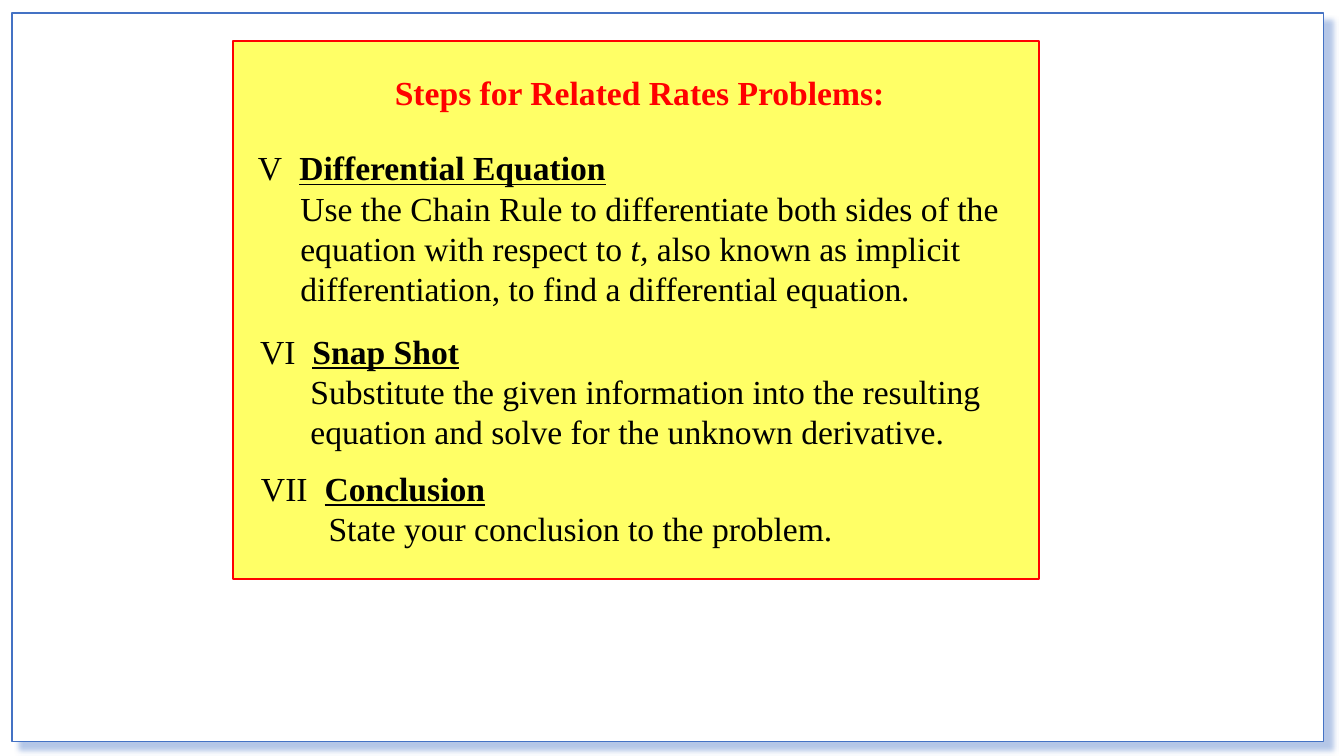
from dataclasses import dataclass

from lxml.etree import SubElement
from pptx import Presentation
from pptx.dml.color import RGBColor
from pptx.enum.shapes import MSO_SHAPE
from pptx.enum.text import MSO_ANCHOR, PP_ALIGN
from pptx.oxml.ns import qn
from pptx.util import Inches, Pt


@dataclass(frozen=True)
class Theme:
    font: str = "Times New Roman"
    size: int = 24
    ink: str = "000000"
    red: str = "FF0000"
    blue: str = "4472C4"
    paper: str = "FFFFFF"
    yellow: str = "FFFF66"


THEME = Theme()

# Numeral, heading, tab and indent in inches, place in panel, body runs (text, italic)
STEPS = [
    ("V", "Differential Equation", 0.41, 0.42, (1.88, 18.76, 95.12, 32.27),
     [("Use the Chain Rule to differentiate both sides of the equation "
       "with respect to ", False), ("t, ", True),
      ("also known as implicit differentiation, to find a differential "
       "equation", False), (".", True)]),
    ("VI", "Snap Shot", 0.52, 0.5, (2.13, 52.9, 93.6, 24.6),
     [("Substitute the given information into the resulting equation "
       "and solve for the unknown derivative.", False)]),
    ("VII", "Conclusion", 0.63, 0.67, (2.25, 78.4, 74, 17.1),
     [("State your conclusion to the problem.", False)]),
]


def part(box, x, y, w, h):
    """Return the box at the given percentages of another box."""
    left, top, width, height = box
    return (int(left + width * x / 100), int(top + height * y / 100),
            int(width * w / 100), int(height * h / 100))


def add_rect(slide, box, fill, line, weight):
    rect = slide.shapes.add_shape(MSO_SHAPE.RECTANGLE, *box)
    rect.shadow.inherit = False
    rect.fill.solid()
    rect.fill.fore_color.rgb = RGBColor.from_string(fill)
    rect.line.color.rgb = RGBColor.from_string(line)
    rect.line.width = Pt(weight)
    return rect


def add_run(para, text, color=THEME.ink, bold=False, italic=False, under=False):
    run = para.add_run()
    run.text = text
    font = run.font
    font.name, font.size = THEME.font, Pt(THEME.size)
    font.bold, font.italic, font.underline = bold, italic, under
    font.color.rgb = RGBColor.from_string(color)


def add_frame(slide, box):
    """Draw the outer frame with its soft blue shadow."""
    frame = add_rect(slide, box, THEME.paper, THEME.blue, 1)
    effects = frame._element.spPr.find(qn("a:effectLst"))
    shadow = SubElement(effects, qn("a:outerShdw"), blurRad=str(Pt(4)),
                        dist=str(Pt(8)), dir=str(45 * 60000),
                        algn="tl", rotWithShape="0")
    color = SubElement(shadow, qn("a:srgbClr"), val=THEME.blue)
    SubElement(color, qn("a:alpha"), val="40000")


def set_title(slide, box, text):
    title = slide.shapes.title
    title.left, title.top, title.width, title.height = box
    frame = title.text_frame
    frame.word_wrap = False
    frame.vertical_anchor = MSO_ANCHOR.TOP
    para = frame.paragraphs[0]
    para.alignment = PP_ALIGN.CENTER
    para.line_spacing = 1.0
    add_run(para, text, THEME.red, bold=True)
    slide.shapes._spTree.append(title._element)  # bring above the panel


def add_step(slide, box, numeral, name, tab, indent, body):
    frame = slide.shapes.add_textbox(*box).text_frame
    frame.word_wrap = True
    head = frame.paragraphs[0]
    tabs = SubElement(head._p.get_or_add_pPr(), qn("a:tabLst"))
    SubElement(tabs, qn("a:tab"), pos=str(Inches(tab)), algn="l")
    add_run(head, numeral + "\t")
    add_run(head, name, bold=True, under=True)
    para = frame.add_paragraph()
    props = para._p.get_or_add_pPr()
    props.set("marL", str(Inches(indent)))
    props.set("indent", "0")
    for text, italic in body:
        add_run(para, text, italic=italic)


def add_panel(slide, box):
    """Draw the yellow panel with its title and steps."""
    add_rect(slide, box, THEME.yellow, THEME.red, 1.5)
    set_title(slide, part(box, 18.75, 4.69, 63.38, 9.38),
              "Steps for Related Rates Problems:")
    for numeral, name, tab, indent, place, body in STEPS:
        add_step(slide, part(box, *place), numeral, name, tab, indent, body)


def main():
    deck = Presentation()
    deck.slide_width, deck.slide_height = Inches(13.33), Inches(7.5)
    slide = deck.slides.add_slide(deck.slide_layouts[5])
    page = (0, 0, deck.slide_width, deck.slide_height)
    add_frame(slide, part(page, 0.9, 1.73, 97.6, 96.4))
    add_panel(slide, part(page, 17.33, 5.47, 60, 71.07))
    deck.save("out.pptx")


if __name__ == "__main__":
    main()
